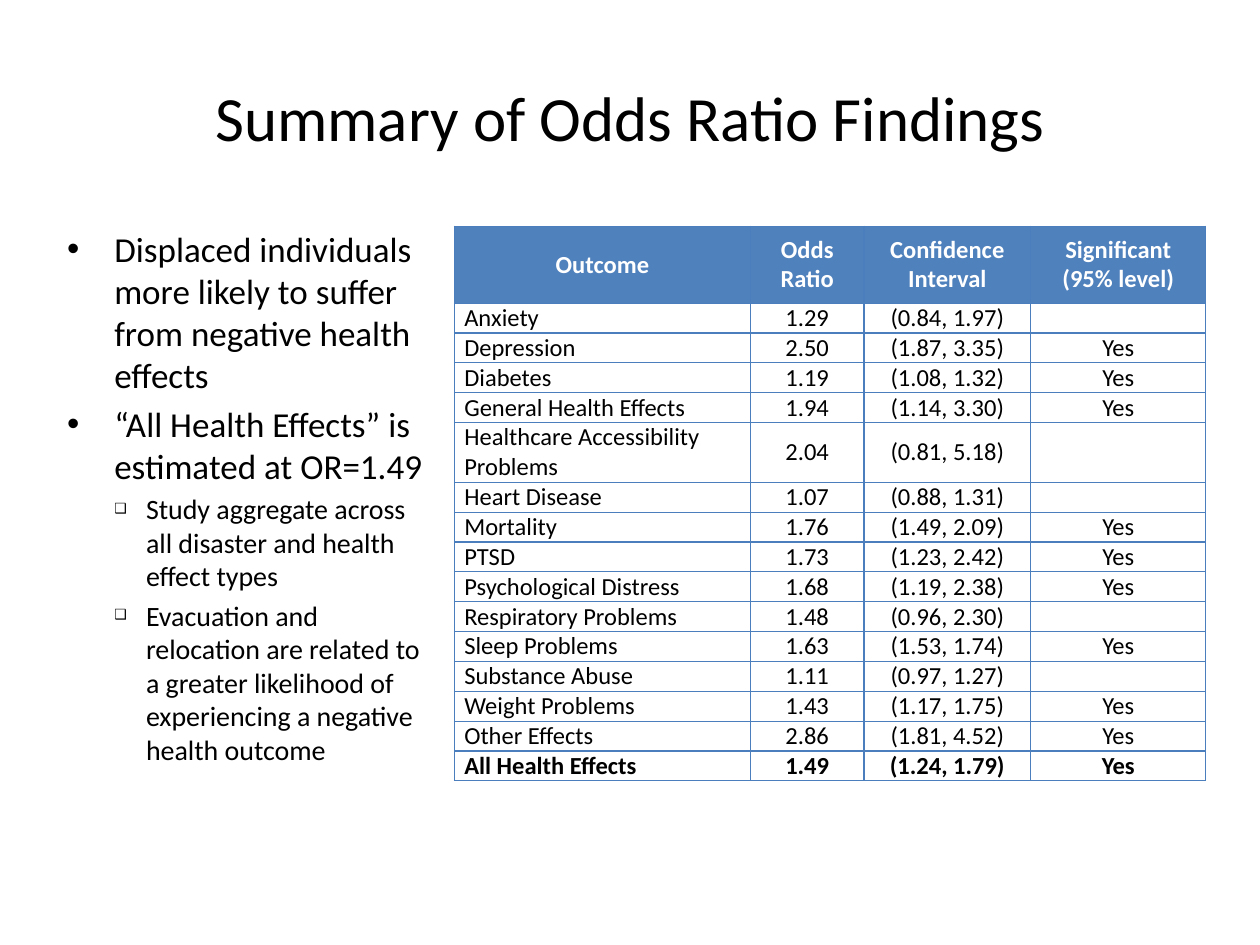
from lxml.etree import SubElement
from pptx import Presentation
from pptx.dml.color import RGBColor
from pptx.enum.text import MSO_ANCHOR as Anchor, MSO_AUTO_SIZE as AutoSize, PP_ALIGN as Align
from pptx.oxml.ns import qn
from pptx.util import Cm, Pt

COLORS = {"text": "000000", "header_text": "FFFFFF", "header_fill": "4F81BD", "border": "4B7EBC"}
FONT = "Calibri"

HEADINGS = ["Outcome", "Odds Ratio", "Confidence Interval", "Significant (95% level)"]
FINDINGS = [
    ("Anxiety", "1.29", "(0.84, 1.97)", ""),
    ("Depression", "2.50", "(1.87, 3.35)", "Yes"),
    ("Diabetes", "1.19", "(1.08, 1.32)", "Yes"),
    ("General Health Effects", "1.94", "(1.14, 3.30)", "Yes"),
    ("Healthcare Accessibility Problems", "2.04", "(0.81, 5.18)", ""),
    ("Heart Disease", "1.07", "(0.88, 1.31)", ""),
    ("Mortality", "1.76", "(1.49, 2.09)", "Yes"),
    ("PTSD", "1.73", "(1.23, 2.42)", "Yes"),
    ("Psychological Distress", "1.68", "(1.19, 2.38)", "Yes"),
    ("Respiratory Problems", "1.48", "(0.96, 2.30)", ""),
    ("Sleep Problems", "1.63", "(1.53, 1.74)", "Yes"),
    ("Substance Abuse", "1.11", "(0.97, 1.27)", ""),
    ("Weight Problems", "1.43", "(1.17, 1.75)", "Yes"),
    ("Other Effects", "2.86", "(1.81, 4.52)", "Yes"),
    ("All Health Effects", "1.49", "(1.24, 1.79)", "Yes"),
]
COLUMN_SHARES = [0.394, 0.151, 0.222, 0.233]

TAKEAWAYS = [
    (0, "Displaced individuals more likely to suffer from negative health effects"),
    (0, "“All Health Effects” is estimated at OR=1.49"),
    (1, "Study aggregate across all disaster and health effect types"),
    (1, "Evacuation and relocation are related to a greater likelihood of "
        "experiencing a negative health outcome"),
]
# Per level: text size, left margin, hanging indent, bullet, bullet size in percent
LEVELS = [(20, Cm(0.95), Cm(-0.95), "•", 100), (16, Cm(1.59), Cm(-0.64), "❑", 50)]


def place(shape, box):
    shape.left, shape.top, shape.width, shape.height = box


def add_run(paragraph, text, size, color="text", bold=False):
    run = paragraph.add_run()
    run.text = text
    run.font.name, run.font.size, run.font.bold = FONT, Pt(size), bold
    run.font.color.rgb = RGBColor.from_string(COLORS[color])


def add_title(slide, box):
    title = slide.shapes.title
    place(title, box)
    title.text_frame.vertical_anchor = Anchor.MIDDLE
    heading = title.text_frame.paragraphs[0]
    heading.alignment = Align.CENTER
    add_run(heading, "Summary of Odds Ratio Findings", 36)


def set_borders(cell):
    properties = cell._tc.get_or_add_tcPr()
    for side in ("lnL", "lnR", "lnT", "lnB"):
        line = SubElement(properties, qn(f"a:{side}"), w=str(Pt(0.75)))
        fill = SubElement(line, qn("a:solidFill"))
        SubElement(fill, qn("a:srgbClr"), val=COLORS["border"])


def fill_cell(cell, text, centred, header, bold):
    cell.vertical_anchor = Anchor.MIDDLE
    cell.margin_left = cell.margin_right = Cm(0.2)
    cell.margin_top = cell.margin_bottom = 0
    set_borders(cell)
    if header:
        cell.fill.solid()
        cell.fill.fore_color.rgb = RGBColor.from_string(COLORS["header_fill"])
    else:
        cell.fill.background()
    paragraph = cell.text_frame.paragraphs[0]
    paragraph.alignment = Align.CENTER if centred else Align.LEFT
    if text:
        add_run(paragraph, text, 14, "header_text" if header else "text", bold)
    else:  # keeps an empty cell from stretching its row
        SubElement(paragraph._p, qn("a:endParaRPr"), sz="1400")


def add_findings_table(slide, box):
    rows = [HEADINGS, *FINDINGS]
    table = slide.shapes.add_table(len(rows), len(HEADINGS), *box).table
    table.horz_banding = False
    for column, share in zip(table.columns, COLUMN_SHARES):
        column.width = int(box[2] * share)
    header_height = Cm(1.55)
    for r, values in enumerate(rows):
        header = r == 0
        table.rows[r].height = header_height if header else (box[3] - header_height) // len(FINDINGS)
        for c, text in enumerate(values):
            fill_cell(table.cell(r, c), text, centred=header or c > 0,
                      header=header, bold=header or r == len(FINDINGS))


def add_takeaways(slide, box):
    body = slide.placeholders[1]
    place(body, box)
    slide.shapes._spTree.append(body._element)  # in front of the table
    frame = body.text_frame
    frame.auto_size = AutoSize.NONE
    for i, (level, text) in enumerate(TAKEAWAYS):
        size, margin, indent, bullet, bullet_size = LEVELS[level]
        paragraph = frame.add_paragraph() if i else frame.paragraphs[0]
        paragraph.level = level
        properties = paragraph._p.get_or_add_pPr()
        properties.set("marL", str(margin))
        properties.set("indent", str(indent))
        SubElement(properties, qn("a:buSzPct"), val=str(bullet_size * 1000))
        SubElement(properties, qn("a:buFont"), typeface="Arial")
        SubElement(properties, qn("a:buChar"), char=bullet)
        paragraph.space_before = Pt(size * 0.2 if i else 0)
        add_run(paragraph, text, size)


def main():
    deck = Presentation()
    deck.slide_width, deck.slide_height = Cm(25.4), Cm(19.05)
    slide = deck.slides.add_slide(deck.slide_layouts[1])
    add_title(slide, (Cm(1.27), Cm(0.76), Cm(22.86), Cm(3.18)))
    add_findings_table(slide, (Cm(9.16), Cm(4.56), Cm(15.15), Cm(10)))
    add_takeaways(slide, (Cm(1.1), Cm(4.45), Cm(7.7), Cm(13.13)))
    deck.save("out.pptx")


if __name__ == "__main__":
    main()
